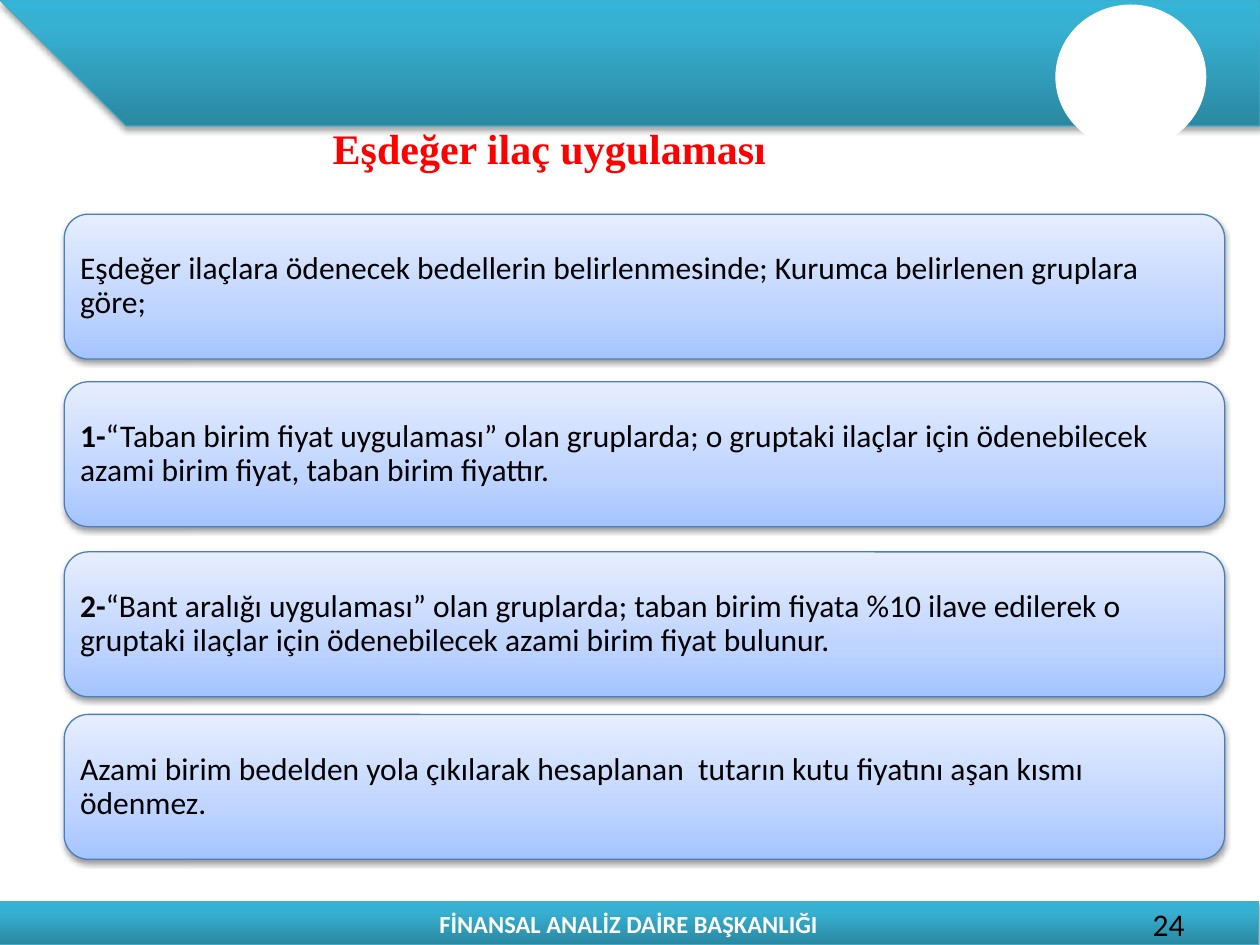
from lxml.etree import SubElement
from pptx import Presentation
from pptx.dml.color import RGBColor
from pptx.enum.shapes import MSO_SHAPE
from pptx.enum.text import MSO_ANCHOR, PP_ALIGN
from pptx.oxml.ns import qn
from pptx.util import Inches, Pt

WHITE = RGBColor(0xFF, 0xFF, 0xFF)
BLACK = RGBColor(0x00, 0x00, 0x00)
RED = RGBColor(0xFF, 0x00, 0x00)
TEAL_LINE = RGBColor(0x46, 0xAA, 0xC5)
BLUE_LINE = RGBColor(0x4B, 0x7E, 0xBC)
TEAL_STOPS = [(0, RGBColor(0x2A, 0x88, 0xA2)), (80, RGBColor(0x37, 0xB1, 0xD2)),
              (100, RGBColor(0x34, 0xB4, 0xD6))]
BLUE_STOPS = [(0, RGBColor(0xA4, 0xC4, 0xFF)), (35, RGBColor(0xBF, 0xD4, 0xFF)),
              (100, RGBColor(0xE6, 0xEE, 0xFF))]

TITLE = "Eşdeğer ilaç uygulaması"
FOOTER = "FİNANSAL ANALİZ DAİRE BAŞKANLIĞI"
PAGE = "24"
CARDS = [
    (1.7, "", "Eşdeğer ilaçlara ödenecek bedellerin belirlenmesinde; "
              "Kurumca belirlenen gruplara göre;"),
    (3.03, "1-", "“Taban birim fiyat uygulaması” olan gruplarda; o gruptaki ilaçlar için "
                 "ödenebilecek azami birim fiyat, taban birim fiyattır."),
    (4.38, "2-", "“Bant aralığı uygulaması” olan gruplarda; taban birim fiyata %10 ilave "
                 "edilerek o gruptaki ilaçlar için ödenebilecek azami birim fiyat bulunur."),
    (5.67, "", "Azami birim bedelden yola çıkılarak hesaplanan  tutarın kutu fiyatını "
               "aşan kısmı ödenmez."),
]
BAND_START = [(0, -0.03), (10.03, -0.03), (10, 1.07)]
BAND_CURVES = [[(10, 1.07), (9.71, 1.23), (8.96, 0.97), (8.3, 0.92)],
               [(8.3, 0.92), (7.64, 0.87), (6.7, 0.8), (6.05, 0.76)]]
BAND_END = [(4.44, 0.67), (3.22, 0.6), (1.41, 0.51), (0, 0.44)]
CURVE_STEPS = 16


def curve_points(curve):
    for i in range(1, CURVE_STEPS + 1):
        t = i / CURVE_STEPS
        weights = ((1 - t) ** 3, 3 * t * (1 - t) ** 2, 3 * t * t * (1 - t), t ** 3)
        yield tuple(sum(w * p[axis] for w, p in zip(weights, curve)) for axis in (0, 1))


def style_shape(shape, stops, line_color, shadow_alpha, shadow_dist):
    shape.fill.gradient()
    shape.fill.gradient_angle = 90
    stop_list = shape._element.spPr.find(qn("a:gradFill")).find(qn("a:gsLst"))
    for old in list(stop_list):
        stop_list.remove(old)
    for position, color in stops:
        stop = SubElement(stop_list, qn("a:gs"), pos=str(position * 1000))
        SubElement(stop, qn("a:srgbClr"), val=str(color))
    shape.line.color.rgb = line_color
    shape.line.width = Pt(0.75)
    shape.shadow.inherit = False
    effects = shape._element.spPr.find(qn("a:effectLst"))
    shadow = SubElement(effects, qn("a:outerShdw"), blurRad=str(Pt(3.1)),
                        dist=str(Pt(shadow_dist)), dir="5400000", rotWithShape="0")
    color = SubElement(shadow, qn("a:srgbClr"), val=str(BLACK))
    SubElement(color, qn("a:alpha"), val=str(shadow_alpha * 1000))


def format_run(r, size, color, bold=False, font="Calibri"):
    r.font.name = font
    r.font.size = Pt(size)
    r.font.bold = bold
    r.font.color.rgb = color


def set_line(tf, text, align, *style):
    p = tf.paragraphs[0]
    p.text = text
    p.alignment = align
    format_run(p.runs[0], *style)


def add_shape(s, kind, left, top, width, height):
    return s.shapes.add_shape(kind, Inches(left), Inches(top), Inches(width), Inches(height))


def add_band(s):
    points = BAND_START + [pt for c in BAND_CURVES for pt in curve_points(c)] + BAND_END
    builder = s.shapes.build_freeform(*points[0], scale=Inches(1))
    builder.add_line_segments(points[1:], close=True)
    style_shape(builder.convert_to_shape(), TEAL_STOPS, TEAL_LINE, 35, 1.8)
    circle = add_shape(s, MSO_SHAPE.OVAL, 8.39, 0.05, 1.17, 1.12)
    circle.shadow.inherit = False
    circle.fill.solid()
    circle.fill.fore_color.rgb = WHITE
    circle.line.color.rgb = WHITE
    circle.line.width = Pt(2)


def add_footer(s):
    bar = add_shape(s, MSO_SHAPE.RECTANGLE, -0.01, 7.16, 10, 0.34)
    style_shape(bar, TEAL_STOPS, TEAL_LINE, 35, 1.8)
    set_line(bar.text_frame, FOOTER, PP_ALIGN.CENTER, 14, WHITE, True)
    page = s.shapes.add_textbox(Inches(7.17), Inches(7.13), Inches(2.33), Inches(0.4))
    page.text_frame.word_wrap = True
    set_line(page.text_frame, PAGE, PP_ALIGN.RIGHT, 18, BLACK)


def add_card(s, top, number, text):
    card = add_shape(s, MSO_SHAPE.ROUNDED_RECTANGLE, 0.51, top, 9.21, 1.15)
    style_shape(card, BLUE_STOPS, BLUE_LINE, 38, 1.6)
    tf = card.text_frame
    tf.word_wrap = True
    tf.vertical_anchor = MSO_ANCHOR.MIDDLE
    tf.margin_left = tf.margin_right = tf.margin_top = tf.margin_bottom = Inches(0.07)
    p = tf.paragraphs[0]
    p.alignment = PP_ALIGN.LEFT
    p.line_spacing = 0.9
    for part, bold in ((number, True), (text, False)):
        if part:
            r = p.add_run()
            r.text = part
            format_run(r, 18, BLACK, bold)


def main():
    prs = Presentation()
    prs.slide_width, prs.slide_height = Inches(10), Inches(7.5)
    s = prs.slides.add_slide(prs.slide_layouts[5])
    add_band(s)
    add_footer(s)
    for card in CARDS:
        add_card(s, *card)
    title = s.shapes.title
    title.left, title.top = Inches(0.07), Inches(0.92)
    title.width, title.height = Inches(8.58), Inches(0.71)
    title.text_frame.vertical_anchor = MSO_ANCHOR.TOP
    set_line(title.text_frame, TITLE, PP_ALIGN.CENTER, 24, RED, True, "Times New Roman")
    prs.save("out.pptx")


if __name__ == "__main__":
    main()
